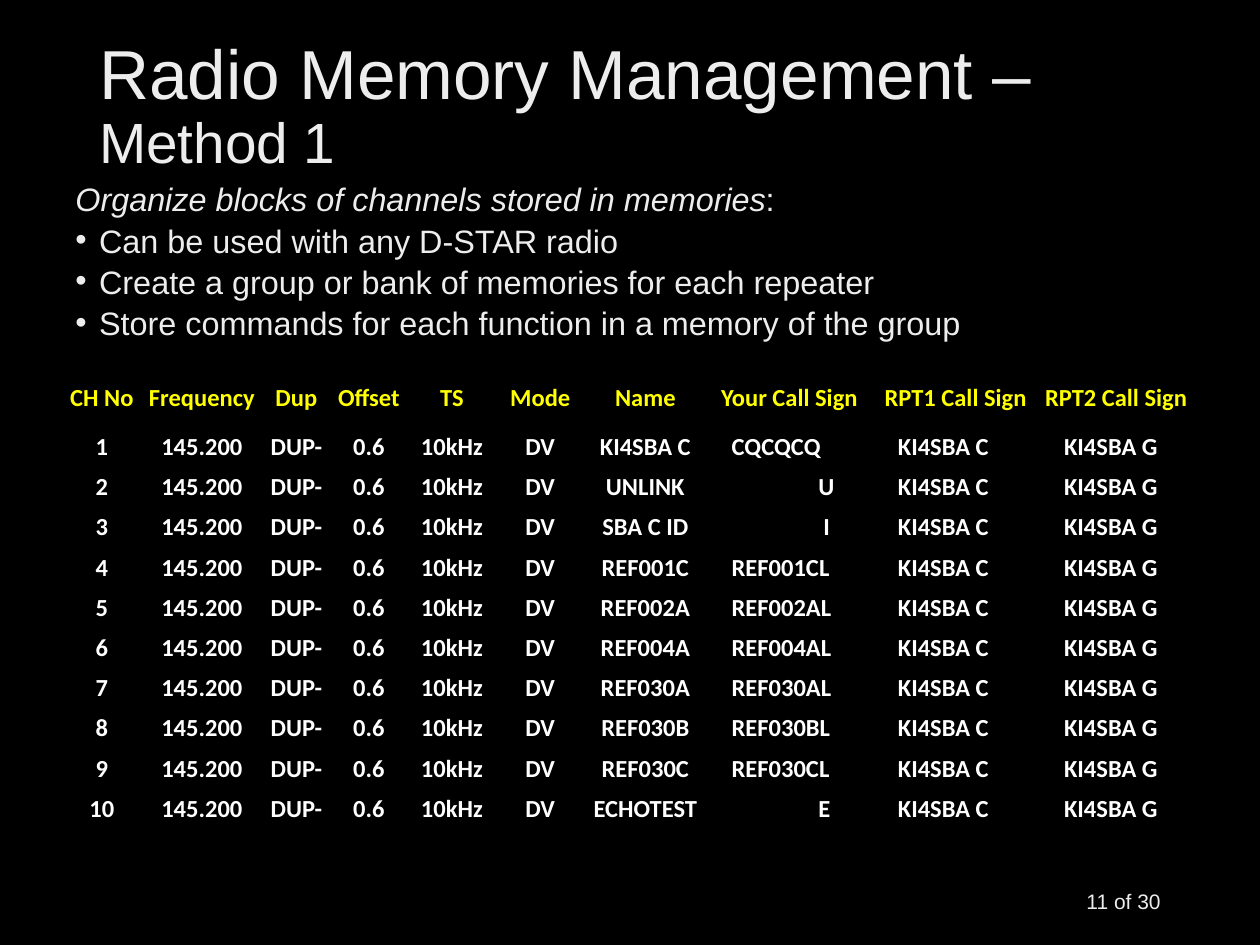
from pptx import Presentation, util as u
from pptx.dml.color import RGBColor
from pptx.enum import text
from lxml import etree

BLACK, PALE, YELLOW, WHITE = "000000", "EDEDED", "FFFF00", "FFFFFF"
NO_GRID_STYLE = "{2D5ABB26-0587-4C30-8999-92F81FD0307C}"

TITLE = [("Radio Memory Management – ", 39.6), ("Method 1", 32.4)]
INTRO = ("Organize blocks of channels stored in memories", ":")
BULLETS = [
    "Can be used with any D-STAR radio",
    "Create a group or bank of memories for each repeater",
    "Store commands for each function in a memory of the group",
]
PAGE = "11 of 30"

HEADERS = ["CH No", "Frequency", "Dup", "Offset", "TS", "Mode", "Name",
           "Your Call Sign", "RPT1 Call Sign", "RPT2 Call Sign"]
CHANNEL = ["145.200", "DUP-", "0.6", "10kHz", "DV"]
REPEATERS = ["KI4SBA C", "KI4SBA G"]
MEMORIES = [
    ("KI4SBA C", "CQCQCQ"), ("UNLINK", "U"), ("SBA C ID", "I"),
    ("REF001C", "REF001CL"), ("REF002A", "REF002AL"), ("REF004A", "REF004AL"),
    ("REF030A", "REF030AL"), ("REF030B", "REF030BL"), ("REF030C", "REF030CL"),
    ("ECHOTEST", "E"),
]
COLUMN_WIDTHS = [1.57, 2.46, 1.35, 1.57, 1.78, 1.78, 2.46, 3.35, 3.35, 3.12]
HEADER_HEIGHT, ROW_HEIGHT = 1.19, 0.81
FIRST_CALL_COLUMN = 7
CALL_INDENT = 0.51
COMMAND_INDENTS = {"U": 2.26, "E": 2.26, "I": 2.36}


def color(value):
    return RGBColor.from_string(value)


def set_all(target, values):
    for name, value in values.items():
        setattr(target, name, value)


def add_run(paragraph, content, size, hue=PALE, name="Arial", **extra):
    run = paragraph.add_run()
    run.text = content
    set_all(run.font, {"size": u.Pt(size), "name": name, **extra})
    run.font.color.rgb = color(hue)


def add_box(slide, left, top, width, height, **values):
    frame = slide.shapes.add_textbox(*map(u.Cm, (left, top, width, height))).text_frame
    set_all(frame, {"word_wrap": True, **values})
    return frame


def add_bullet(paragraph):
    properties = paragraph._p.get_or_add_pPr()
    properties.set("marL", str(u.Cm(0.48)))
    properties.set("indent", str(-u.Cm(0.48)))
    namespace = properties.nsmap["a"]
    etree.SubElement(properties, f"{{{namespace}}}buFont", typeface="Arial")
    etree.SubElement(properties, f"{{{namespace}}}buChar", char="•")


def add_title(slide):
    frame = add_box(slide, 1.75, 1.02, 21.89, 3.89, margin_top=0, margin_bottom=u.Cm(1.6),
                    vertical_anchor=text.MSO_ANCHOR.MIDDLE)
    paragraph = frame.paragraphs[0]
    paragraph.line_spacing = 0.9
    for content, size in TITLE:
        add_run(paragraph, content, size)


def add_body(slide):
    frame = add_box(slide, 1.27, 3.63, 22.86, 3.56, margin_top=u.Cm(0.2))
    paragraph = frame.paragraphs[0]
    paragraph.line_spacing = 0.7
    for content, slanted in zip(INTRO, (True, False)):
        add_run(paragraph, content, 18.5, italic=slanted)
    for content in BULLETS:
        paragraph = frame.add_paragraph()
        add_bullet(paragraph)
        set_all(paragraph, {"line_spacing": 0.7, "space_before": u.Pt(8.1)})
        add_run(paragraph, content, 18.5)


def add_memory_table(slide):
    rows = [HEADERS] + [
        [str(number), *CHANNEL, name, call, *REPEATERS]
        for number, (name, call) in enumerate(MEMORIES, 1)
    ]
    height = HEADER_HEIGHT + ROW_HEIGHT * len(MEMORIES)
    frame = slide.shapes.add_table(
        len(rows), len(HEADERS), u.Cm(1.27), u.Cm(7.42),
        u.Cm(sum(COLUMN_WIDTHS)), u.Cm(height))
    table = frame.table
    table._tbl.tblPr[0].text = NO_GRID_STYLE
    table.horz_banding = False
    for column, width in zip(table.columns, COLUMN_WIDTHS):
        column.width = u.Cm(width)
    for i, row in enumerate(rows):
        table.rows[i].height = u.Cm(ROW_HEIGHT if i else HEADER_HEIGHT)
        for j, content in enumerate(row):
            is_call = i > 0 and j >= FIRST_CALL_COLUMN
            indent = COMMAND_INDENTS.get(content, CALL_INDENT) if is_call else 0
            cell = table.cell(i, j)
            set_all(cell, {"margin_left": u.Cm(indent), "margin_right": 0,
                           "margin_top": 0, "margin_bottom": 0,
                           "vertical_anchor": text.MSO_ANCHOR.MIDDLE})
            cell.fill.solid()
            cell.fill.fore_color.rgb = color(BLACK)
            paragraph = cell.text_frame.paragraphs[0]
            paragraph.alignment = text.PP_ALIGN.LEFT if is_call else text.PP_ALIGN.CENTER
            add_run(paragraph, content, 14, WHITE if i else YELLOW, "Calibri", bold=True)


def add_page_number(slide):
    frame = add_box(slide, 17.93, 17.65, 5.72, 1.02, vertical_anchor=text.MSO_ANCHOR.MIDDLE)
    paragraph = frame.paragraphs[0]
    paragraph.alignment = text.PP_ALIGN.RIGHT
    add_run(paragraph, PAGE, 12)


def main():
    presentation = Presentation()
    set_all(presentation, {"slide_width": u.Cm(25.4), "slide_height": u.Cm(19.05)})
    slide = presentation.slides.add_slide(presentation.slide_layouts[6])
    slide.background.fill.solid()
    slide.background.fill.fore_color.rgb = color(BLACK)
    for add_part in (add_title, add_body, add_memory_table, add_page_number):
        add_part(slide)
    presentation.save("out.pptx")


if __name__ == "__main__":
    main()
